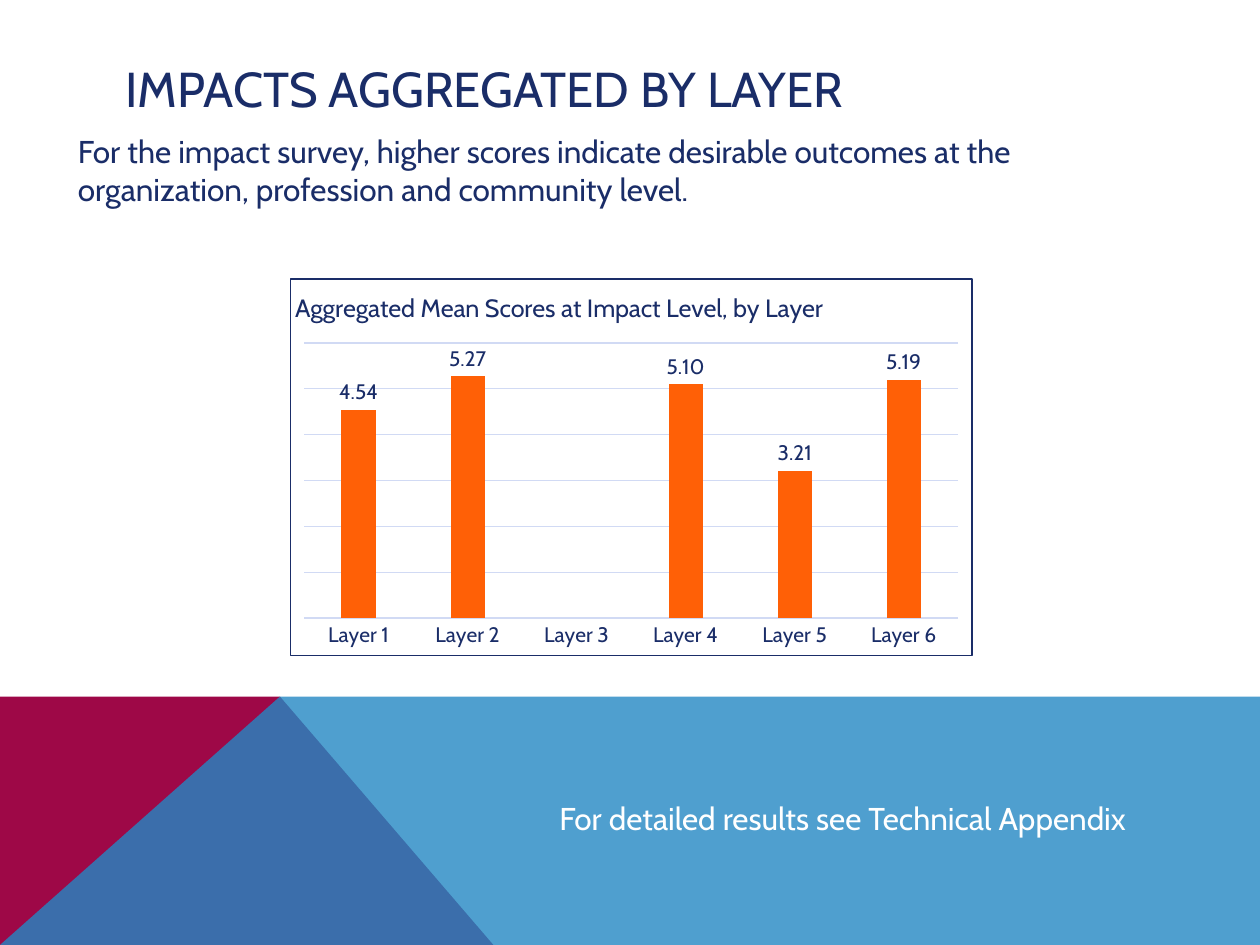
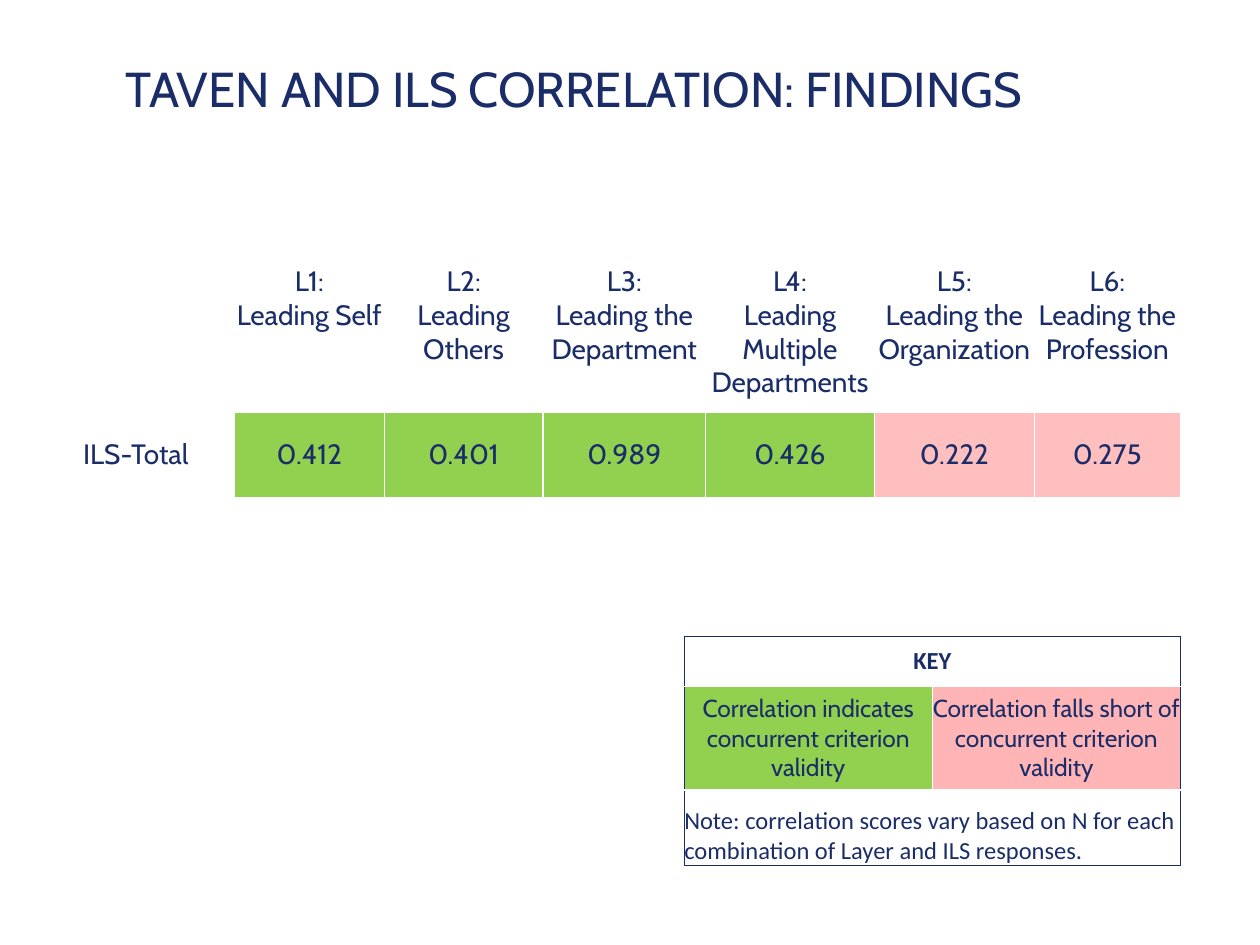
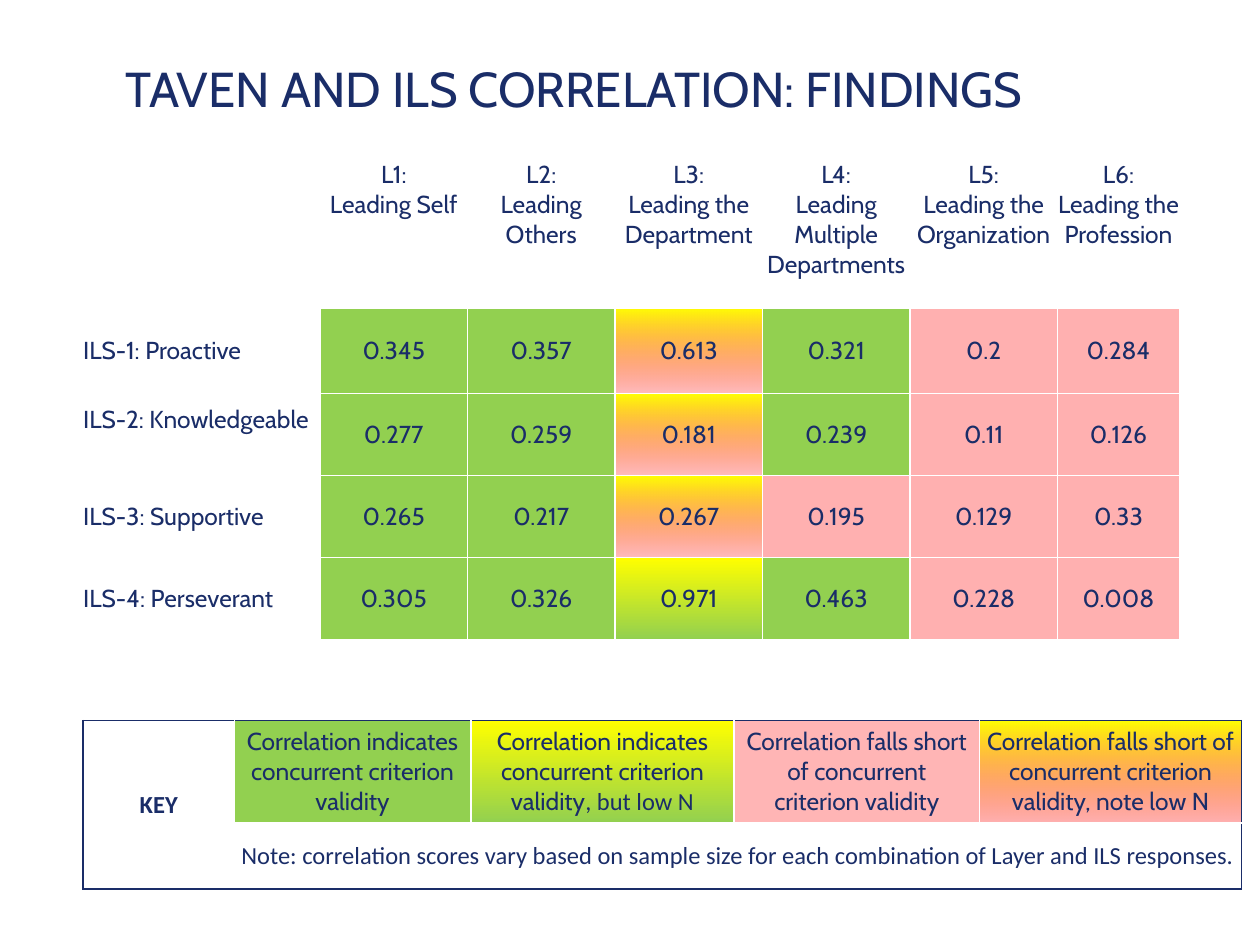
"""Build three slides on impact scores and survey correlations."""
from dataclasses import dataclass

from lxml.etree import SubElement
from pptx import Presentation
from pptx.chart.data import CategoryChartData
from pptx.dml.color import RGBColor
from pptx.enum.chart import XL_CHART_TYPE as ChartType
from pptx.enum.chart import XL_LABEL_POSITION as LabelPlace
from pptx.enum.chart import XL_TICK_LABEL_POSITION as TickLabels
from pptx.enum.chart import XL_TICK_MARK as TickMark
from pptx.enum.text import MSO_ANCHOR as Anchor
from pptx.enum.text import PP_ALIGN as Align
from pptx.oxml.ns import qn
from pptx.util import Pt


@dataclass(frozen=True)
class Theme:
    navy: str = "1A2D68"
    white: str = "FFFFFF"
    crimson: str = "9E0847"
    blue: str = "2388C4"
    orange: str = "FF6006"
    grid: str = "D1DAF4"
    green: str = "92D050"
    yellow: str = "FFFF00"
    red: str = "FF0000"
    font: str = "Cabin"
    note_font: str = "Calibri"
    title_size: int = 28
    body_size: int = 18
    large_size: int = 16
    small_size: int = 14
    chart_title_size: float = 14.4
    chart_size: int = 12


THEME = Theme()

IMPACT_TITLE = "IMPACTS AGGREGATED BY LAYER"
IMPACT_INTRO = ("For the impact survey, higher scores indicate desirable outcomes "
                "at the organization, profession and community level.")
IMPACT_FOOTER = "For detailed results see Technical Appendix"
CHART_TITLE = "Aggregated Mean Scores at Impact Level, by Layer"
SCORES = [4.54, 5.27, None, 5.10, 3.21, 5.19]
BANDS = [
    (THEME.crimson, 100, [(0, 540), (0, 397.5), (160.5, 397.5), (281.5, 540)]),
    (THEME.blue, 80, [(0, 540), (160.5, 397.5), (720, 398), (720, 540)]),
]

FINDINGS_TITLE = "TAVEN AND ILS CORRELATION: FINDINGS"
LAYERS = ["Leading Self", "Leading Others", "Leading the Department",
          "Leading Multiple Departments", "Leading the Organization",
          "Leading the Profession"]
TOTALS = [("ILS-Total", "0.412 0.401 0.989 0.426 0.222 0.275", "GGGGRR")]
SUBSCALES = [
    ("ILS-1: Proactive", "0.345 0.357 0.613 0.321 0.2 0.284", "GGFGRR"),
    ("ILS-2: Knowledgeable", "0.277 0.259 0.181 0.239 0.11 0.126", "GGFGRR"),
    ("ILS-3: Supportive", "0.265 0.217 0.267 0.195 0.129 0.33", "GGFRRR"),
    ("ILS-4: Perseverant", "0.305 0.326 0.971 0.463 0.228 0.008", "GGLGRR"),
]
VALID = "Correlation indicates concurrent criterion validity"
SHORT = "Correlation falls short of concurrent criterion validity"
KEY = {"text": "KEY", "mark": "W", "font": THEME.note_font, "bold": True}
TOTAL_KEY = [
    [KEY, {}],
    [{"text": VALID, "mark": "G"}, {"text": SHORT, "mark": "R"}],
    [{"text": "Note: correlation scores vary based on N for each combination "
              "of Layer and ILS responses.",
      "font": THEME.note_font, "align": Align.LEFT, "anchor": Anchor.BOTTOM}, {}],
]
SUBSCALE_KEY = [
    [KEY,
     {"text": VALID, "mark": "G"},
     {"text": VALID, "tail": ", but low N", "mark": "L"},
     {"text": "Correlation falls short of concurrent\ncriterion validity", "mark": "R"},
     {"text": SHORT + ", note low N", "mark": "F"}],
    [{},
     {"text": "Note: correlation scores vary based on sample size for each "
              "combination of Layer and ILS responses.", "font": THEME.note_font},
     {}, {}, {}],
]


def rgb(color):
    return RGBColor.from_string(color)


def write(frame, text, size=THEME.body_size, font=THEME.font, color=THEME.navy,
          bold=False, align=Align.LEFT, anchor=Anchor.TOP, tail=""):
    frame.vertical_anchor = anchor
    for index, line in enumerate(text.split("\n")):
        para = frame.paragraphs[0] if index == 0 else frame.add_paragraph()
        para.alignment = align
        for words, face in ((line, font), (tail, THEME.note_font)):
            if words:
                span = para.add_run()
                span.text = words
                span.font.size, span.font.name = Pt(size), face
                span.font.bold, span.font.color.rgb = bold, rgb(color)


def add_text(page, place, text, wrap=True, **style):
    box = page.shapes.add_textbox(*map(Pt, place))
    box.text_frame.word_wrap = wrap
    write(box.text_frame, text, **style)


def add_page(deck, title):
    page = deck.slides.add_slide(deck.slide_layouts[6])
    add_text(page, (64.8, 28.8, 592, 43.2), title, size=THEME.title_size,
             anchor=Anchor.MIDDLE)
    return page


def add_color(parent, color, alpha=100):
    node = SubElement(parent, qn("a:srgbClr"), val=color)
    if alpha < 100:
        SubElement(node, qn("a:alpha"), val=str(alpha * 1000))


def add_fill(parent, stops):
    if not stops:
        SubElement(parent, qn("a:noFill"))
    elif len(stops) == 1:
        add_color(SubElement(parent, qn("a:solidFill")), *stops[0])
    else:
        fill = SubElement(parent, qn("a:gradFill"), rotWithShape="1")
        ramp = SubElement(fill, qn("a:gsLst"))
        for position, stop in zip((0, 100000), stops):
            add_color(SubElement(ramp, qn("a:gs"), pos=str(position)), *stop)
        SubElement(fill, qn("a:lin"), ang="5400000", scaled="0")


def add_line(parent, tag, color, width):
    line = SubElement(parent, qn(tag), w=str(Pt(width)))
    add_fill(line, [(color, 100)])


def make_fills(red_alpha, fade_alpha):
    yellow = (THEME.yellow, 100)
    green = (THEME.green, 100)
    return {".": [], "W": [(THEME.white, 100)], "G": [green],
            "R": [(THEME.red, red_alpha)], "L": [yellow, green],
            "F": [yellow, (THEME.red, fade_alpha)]}


def add_grid(page, left, top, widths, heights, rows, fills,
             size=THEME.small_size, frame_color=THEME.white, merges=()):
    table = page.shapes.add_table(len(heights), len(widths), Pt(left), Pt(top),
                                  Pt(sum(widths)), Pt(sum(heights))).table
    table.first_row = table.horz_banding = False
    for column, width in zip(table.columns, widths):
        column.width = Pt(width)
    for row, height in zip(table.rows, heights):
        row.height = Pt(height)
    for first, last in merges:
        table.cell(*first).merge(table.cell(*last))
    for y, row in enumerate(rows):
        for x, content in enumerate(row):
            cell = table.cell(y, x)
            style = {"text": "", "size": size, "align": Align.CENTER,
                     "anchor": Anchor.MIDDLE, **content}
            mark, lift = style.pop("mark", "."), style.pop("lift", 0)
            cell.margin_left = cell.margin_right = cell.margin_top = 0
            cell.margin_bottom = Pt(lift)
            cell.vertical_anchor = style.pop("anchor")
            write(cell.text_frame, anchor=None, **style)
            across = cell.span_width if cell.is_merge_origin else 1
            down = cell.span_height if cell.is_merge_origin else 1
            outer = {"a:lnL": x == 0, "a:lnR": x + across == len(widths),
                     "a:lnT": y == 0, "a:lnB": y + down == len(heights)}
            properties = cell._tc.get_or_add_tcPr()
            for tag, is_outer in outer.items():
                add_line(properties, tag, frame_color if is_outer else THEME.white, 1)
            add_fill(properties, fills[mark])


def correlation_rows(records):
    header = [{}] + [{"text": f"L{number}:\n{name}", "anchor": Anchor.TOP}
                     for number, name in enumerate(LAYERS, 1)]
    rows = [header]
    for label, values, marks in records:
        lift = 17 if label.endswith("Knowledgeable") else 0
        rows.append([{"text": label, "align": Align.LEFT, "lift": lift}]
                    + [{"text": value, "mark": mark}
                       for value, mark in zip(values.split(), marks)])
    return rows


def set_layout(layout, **places):
    manual = SubElement(layout, qn("c:manualLayout"))
    if "w" in places:
        SubElement(manual, qn("c:layoutTarget"), val="inner")
    for axis in ("x", "y"):
        SubElement(manual, qn(f"c:{axis}Mode"), val="edge")
    for name, value in places.items():
        SubElement(manual, qn(f"c:{name}"), val=str(value))


def add_score_chart(page):
    data = CategoryChartData(number_format="0.00")
    data.categories = [f"Layer {number}" for number in range(1, len(SCORES) + 1)]
    data.add_series("Series 1", SCORES)
    chart = page.shapes.add_chart(ChartType.COLUMN_CLUSTERED, Pt(165.6), Pt(159.1),
                                  Pt(390.2), Pt(216), data).chart
    chart.has_legend = False
    chart.font.size, chart.font.name = Pt(THEME.chart_size), THEME.font
    chart.font.color.rgb = rgb(THEME.navy)
    chart.has_title = True
    write(chart.chart_title.text_frame, CHART_TITLE, size=THEME.chart_title_size,
          anchor=None)

    plot = chart.plots[0]
    plot.gap_width, plot.overlap, plot.vary_by_categories = 219, -27, False
    bars = plot.series[0].format.fill
    bars.solid()
    bars.fore_color.rgb = rgb(THEME.orange)
    plot.has_data_labels = True
    labels = plot.data_labels
    labels.show_value, labels.position = True, LabelPlace.OUTSIDE_END
    labels.number_format, labels.number_format_is_linked = "0.00", False
    labels.font.size, labels.font.name = Pt(THEME.chart_size), THEME.font
    labels.font.color.rgb = rgb(THEME.navy)

    layers, scores = chart.category_axis, chart.value_axis
    layers.major_tick_mark = layers.minor_tick_mark = TickMark.NONE
    layers.tick_label_position = TickLabels.NEXT_TO_AXIS
    scores.minimum_scale, scores.maximum_scale, scores.major_unit = 0, 6, 1
    scores.has_major_gridlines, scores.visible = True, False
    for line in (layers.format.line, scores.major_gridlines.format.line):
        line.color.rgb, line.width = rgb(THEME.grid), Pt(0.75)

    root = chart.element.find(qn("c:chart"))
    set_layout(root.find(qn("c:title")).find(qn("c:layout")), x=0, y=0.02)
    area = root.find(qn("c:plotArea"))
    layout = area.find(qn("c:layout"))
    if layout is None:
        layout = SubElement(area, qn("c:layout"))
        area.insert(0, layout)
    set_layout(layout, x=0.02, y=0.17, w=0.96, h=0.73)
    panel = SubElement(chart.element, qn("c:spPr"))
    add_fill(panel, [(THEME.white, 100)])
    add_line(panel, "a:ln", THEME.navy, 0.75)
    root.addnext(panel)


def add_bands(page):
    for color, alpha, points in BANDS:
        builder = page.shapes.build_freeform(*points[0], scale=Pt(1))
        builder.add_line_segments(points[1:], close=True)
        band = builder.convert_to_shape()
        band.shadow.inherit = False
        band.line.fill.background()
        band.fill.solid()
        band.fill.fore_color.rgb = rgb(color)
        if alpha < 100:
            tint = band.element.spPr.find(qn("a:solidFill")).find(qn("a:srgbClr"))
            SubElement(tint, qn("a:alpha"), val=str(alpha * 1000))


def main():
    deck = Presentation()
    deck.slide_width, deck.slide_height = Pt(720), Pt(540)

    impact = add_page(deck, IMPACT_TITLE)
    add_bands(impact)
    add_score_chart(impact)
    add_text(impact, (37.4, 72, 589.7, 72.7), IMPACT_INTRO)
    add_text(impact, (312.5, 452.9, 344.9, 28.8), IMPACT_FOOTER, wrap=False,
             color=THEME.white)

    total = add_page(deck, FINDINGS_TITLE)
    add_grid(total, 47.5, 151.2, [86.4, 85.7, 90.7, 92.9, 96.5, 91.4, 83.5],
             [84.5, 48.5], correlation_rows(TOTALS), make_fills(25, 25),
             size=THEME.large_size)
    add_grid(total, 391, 363.6, [141.8] * 2, [28.8, 59, 43.2], TOTAL_KEY,
             make_fills(29, 30), frame_color=THEME.navy,
             merges=[((0, 0), (0, 1)), ((2, 0), (2, 1))])

    subscale = add_page(deck, FINDINGS_TITLE)
    add_grid(subscale, 47.5, 91.4, [135.4] + [84.3] * 5 + [69.8],
             [84.5, 49] + [46.9] * 3, correlation_rows(SUBSCALES), make_fills(31, 25))
    add_grid(subscale, 47.5, 411.8, [86.4, 135.2, 150.4, 140.3, 149.8], [58.6, 37.6],
             SUBSCALE_KEY, make_fills(29, 30), frame_color=THEME.navy,
             merges=[((0, 0), (1, 0)), ((1, 1), (1, 4))])

    deck.save("out.pptx")


if __name__ == "__main__":
    main()
